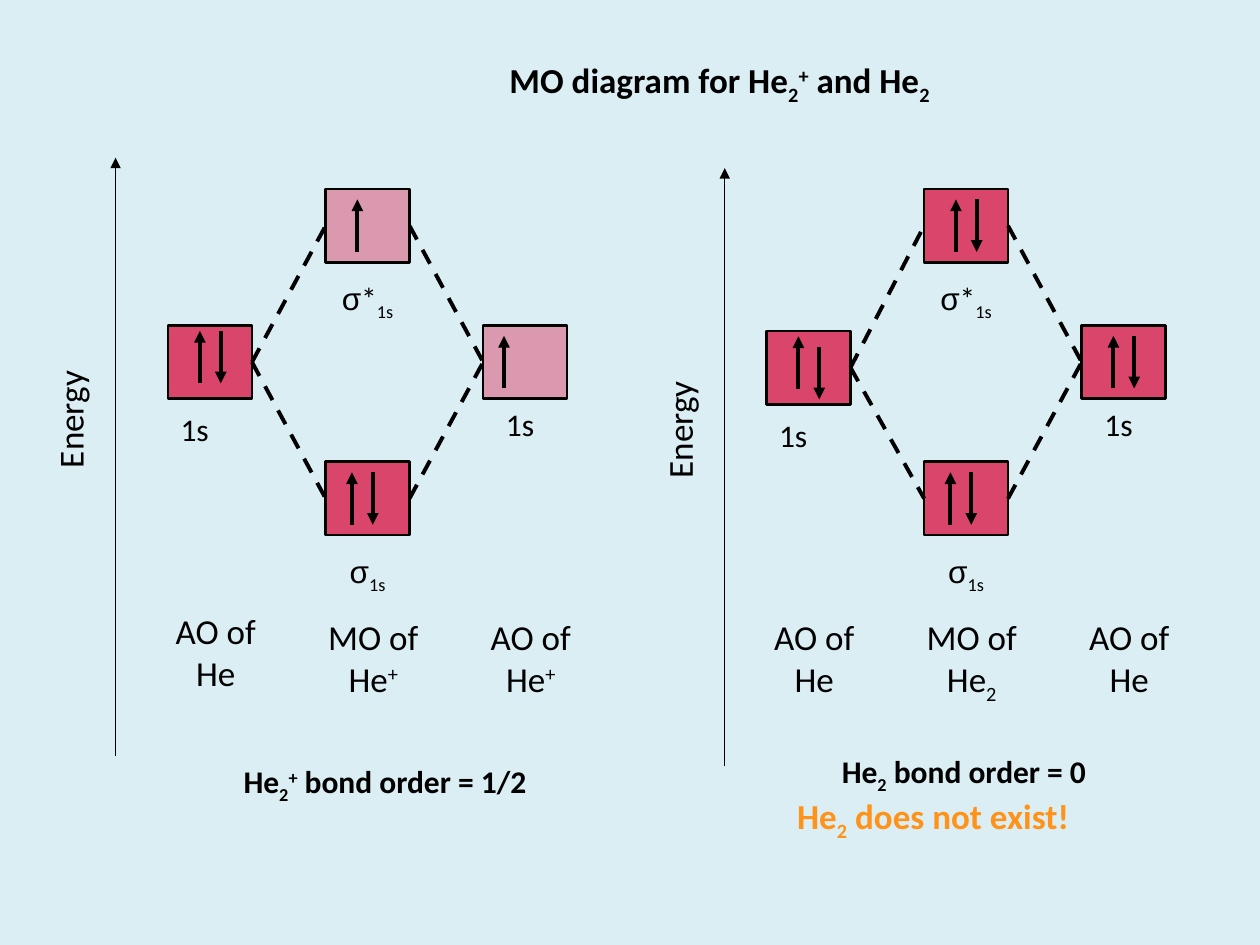
from lxml import etree
from pptx import Presentation
from pptx.dml.color import RGBColor
from pptx.enum.dml import MSO_LINE
from pptx.enum.shapes import MSO_CONNECTOR, MSO_SHAPE
from pptx.enum.text import MSO_ANCHOR, MSO_AUTO_SIZE, PP_ALIGN
from pptx.oxml.ns import qn
from pptx.util import Cm, Pt

STRAIGHT = MSO_CONNECTOR.STRAIGHT
RECTANGLE = MSO_SHAPE.RECTANGLE
DASH = MSO_LINE.DASH
CENTER, LEFT = PP_ALIGN.CENTER, PP_ALIGN.LEFT
TOP = MSO_ANCHOR.TOP
FIT_SHAPE = MSO_AUTO_SIZE.SHAPE_TO_FIT_TEXT

BLACK, ORANGE, PINK, PALE_BLUE = "000000", "FF9218", "DA456B", "DBEEF4"
TITLE_ONLY = 5
LEFT_SIDE, RIGHT_SIDE = 1, 3
BASELINES = {"_": "-25000", "^": "30000"}

BOX_WIDTH, BOX_HEIGHT = 1.69, 1.48
SPIN_LENGTH = 1.06
COLUMN_STEP = 3.175
FIRST_COLUMN = 3.39
UPPER, MIDDLE, LOWER = 3.81, 6.56, 9.31

PANELS = [
    {
        "shift": 0, "axis_shift": (0, 0), "left_top": MIDDLE, "caption_top": 12.17,
        "spins": {
            "left": [(0.64, 0.11, "up"), (1.06, 0.11, "down")],
            "upper": [(0.64, 0.21, "up")],
            "lower": [(0.53, 0.21, "up"), (0.95, 0.21, "down")],
            "right": [(0.42, 0.21, "up")],
        },
        "captions": ["AO of He", "MO of He|^+", "AO of He|^+"],
        "bond_order": ("He|_2|^+| bond order = 1/2", 4.66, 15.24, 7.2),
    },
    {
        "shift": 12.065, "axis_shift": (12.28, 0.21), "left_top": 6.67, "caption_top": 12.28,
        "spins": {
            "left": [(0.64, 0.11, "up"), (1.06, 0.32, "down")],
            "upper": [(0.64, 0.21, "up"), (1.06, 0.21, "down")],
            "lower": [(0.53, 0.21, "up"), (0.95, 0.21, "down")],
            "right": [(0.64, 0.21, "up"), (1.06, 0.21, "down")],
        },
        "captions": ["AO of He", "MO of He|_2", "AO of He"],
        "bond_order": ("He|_2| bond order = 0", 16.72, 15.03, 6.56),
    },
]


def color(hex_value):
    """Return the colour for a hex string."""
    return RGBColor.from_string(hex_value)


def apply_format(target, values):
    """Set each named attribute of the target."""
    for name, value in values.items():
        setattr(target, name, value)


def write_text(shape, text, size, align=LEFT, bold=False, ink=BLACK, **frame_format):
    """Write runs split by bars, where _ lowers and ^ raises a run."""
    frame = shape.text_frame
    apply_format(frame, {"word_wrap": True, "auto_size": FIT_SHAPE,
                         "vertical_anchor": TOP, **frame_format})
    paragraph = frame.paragraphs[0]
    paragraph.alignment = align
    for part in text.split("|"):
        run = paragraph.add_run()
        run.text = part.lstrip("_^")
        font_name = "Arial" if part == "σ" else "Calibri"
        apply_format(run.font, {"name": font_name, "size": Pt(size), "bold": bold})
        run.font.color.rgb = color(ink)
        if part[0] in BASELINES:
            run._r.get_or_add_rPr().set("baseline", BASELINES[part[0]])


def add_label(slide, text, left, top, width, height, size, **text_format):
    """Add a text box."""
    box = slide.shapes.add_textbox(Cm(left), Cm(top), Cm(width), Cm(height))
    write_text(box, text, size, **text_format)
    return box


def add_line(slide, start, end, weight, arrow=False, dash=None):
    """Add a straight black line, with an arrowhead at its end if asked."""
    points = [Cm(value) for value in (*start, *end)]
    connector = slide.shapes.add_connector(STRAIGHT, *points)
    apply_format(connector.line, {"width": Pt(weight), "dash_style": dash})
    connector.line.color.rgb = color(BLACK)
    if arrow:
        outline = connector._element.spPr.find(qn("a:ln"))
        etree.SubElement(outline, qn("a:tailEnd"), type="triangle")
    etree.SubElement(connector._element.spPr, qn("a:effectLst"))
    return connector


def add_orbital(slide, left, top, spins):
    """Add an orbital box with its spins, half transparent when singly filled."""
    box = slide.shapes.add_shape(RECTANGLE, Cm(left), Cm(top), Cm(BOX_WIDTH), Cm(BOX_HEIGHT))
    box.shadow.inherit = False
    box.fill.solid()
    box.fill.fore_color.rgb = color(PINK)
    if len(spins) == 1:
        fill_color = box._element.spPr.find(qn("a:solidFill")).find(qn("a:srgbClr"))
        etree.SubElement(fill_color, qn("a:alpha"), val="50000")
    box.line.color.rgb = color(BLACK)
    box.line.width = Pt(1.5)
    for across, down, direction in spins:
        high = (left + across, top + down)
        low = (left + across, top + down + SPIN_LENGTH)
        start, end = (low, high) if direction == "up" else (high, low)
        add_line(slide, start, end, 2.25, arrow=True)
    return box


def join_orbitals(slide, left_box, right_box):
    """Join two orbitals side to side with a dashed line."""
    connector = add_line(slide, (0, 0), (1, 1), 2.25, dash=DASH)
    connector.begin_connect(left_box, RIGHT_SIDE)
    connector.end_connect(right_box, LEFT_SIDE)


def add_energy_axis(slide, across, down):
    """Add the vertical energy arrow and its turned label."""
    add_line(slide, (2.33 + across, 15.24 + down), (2.33 + across, 3.18 + down), 0.75, arrow=True)
    label = add_label(slide, "Energy", 0.03 + across, 7.77 + down, 2.74, 1.09, 20,
                      word_wrap=False)
    label.rotation = 270


def add_panel(slide, panel):
    """Add one molecular orbital diagram."""
    add_energy_axis(slide, *panel["axis_shift"])
    columns = [FIRST_COLUMN + panel["shift"] + index * COLUMN_STEP for index in range(3)]
    left, center, right = columns
    places = {"left": (left, panel["left_top"]), "upper": (center, UPPER),
              "lower": (center, LOWER), "right": (right, MIDDLE)}
    boxes = {name: add_orbital(slide, *place, panel["spins"][name])
             for name, place in places.items()}
    for name in ("upper", "lower"):
        join_orbitals(slide, boxes["left"], boxes[name])
        join_orbitals(slide, boxes[name], boxes["right"])
    for text, top in (("σ|*|_1s", UPPER), ("σ|_1s", LOWER)):
        add_label(slide, text, center, top + 1.69, BOX_WIDTH, 1.02, 18, align=CENTER)
    add_label(slide, "1s", left, panel["left_top"] + 1.59, BOX_WIDTH, 1.02, 18)
    add_label(slide, "1s", right + 0.21, MIDDLE + BOX_HEIGHT, 1.27, 1.02, 18)
    tops = (panel["caption_top"], 12.28, 12.28)
    margins = ({}, {"margin_left": 0, "margin_right": 0}, {})
    for text, column, top, margin in zip(panel["captions"], columns, tops, margins):
        add_label(slide, text, column - 0.21, top, 2.34, 1.95, 20, align=CENTER, **margin)
    text, text_left, top, width = panel["bond_order"]
    add_label(slide, text, text_left, top, width, 1.02, 18, bold=True)


def add_title(slide, text):
    """Place and fill the title placeholder."""
    title = slide.shapes.title
    apply_format(title, {"left": Cm(8.26), "top": Cm(1.06),
                         "width": Cm(12.49), "height": Cm(1.09)})
    write_text(title, text, 20, align=CENTER, bold=True)


def main():
    """Build the slide and save it."""
    presentation = Presentation()
    apply_format(presentation, {"slide_width": Cm(25.4), "slide_height": Cm(19.05)})
    slide = presentation.slides.add_slide(presentation.slide_layouts[TITLE_ONLY])
    slide.background.fill.solid()
    slide.background.fill.fore_color.rgb = color(PALE_BLUE)
    add_title(slide, "MO diagram for He|_2|^+| and He|_2")
    for panel in PANELS:
        add_panel(slide, panel)
    add_label(slide, "He|_2| does not exist!", 15.82, 15.9, 6.83, 1.09, 20,
              bold=True, ink=ORANGE, word_wrap=False)
    presentation.save("out.pptx")


if __name__ == "__main__":
    main()
